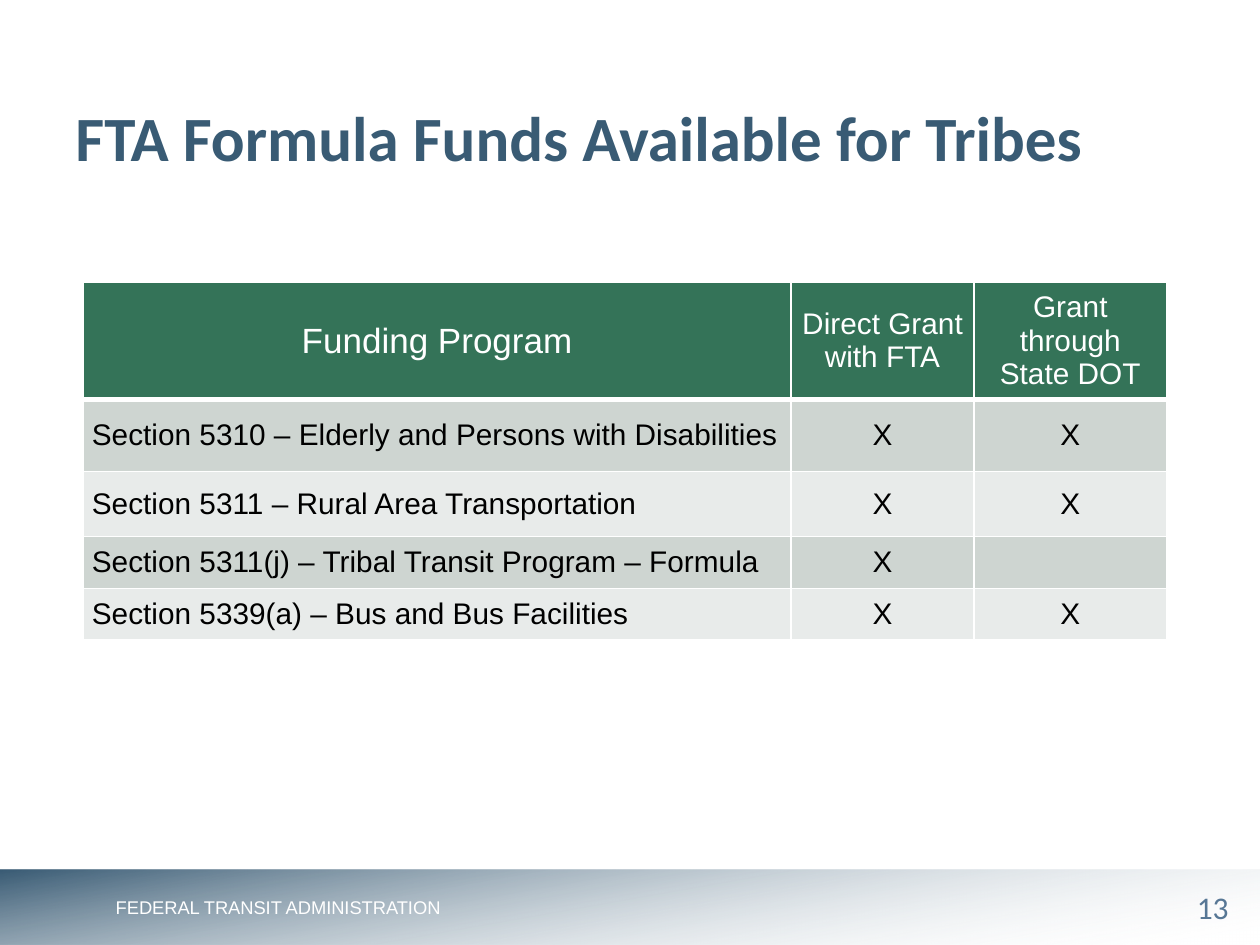
import pptx
import pptx.dml.color
import pptx.enum.shapes
import pptx.enum.text
import pptx.oxml
import pptx.oxml.ns
import pptx.util
from lxml import etree

Inches = pptx.util.Inches
Pt = pptx.util.Pt
qn = pptx.oxml.ns.qn
ALIGN = pptx.enum.text.PP_ALIGN
MIDDLE = pptx.enum.text.MSO_ANCHOR.MIDDLE

SLIDE_WIDTH, SLIDE_HEIGHT = 10, 7.5
BAND_SHARE = 0.08
NAVY, SLATE, GREEN, WHITE, BLACK = "395B74", "577795", "347358", "FFFFFF", "000000"
ROW_FILLS = ["CED5D1", "E8EBEA"]
COLUMN_WIDTHS = [5.62, 1.45, 1.53]
ROW_HEIGHTS = [0.64, 0.57, 0.52, 0.41, 0.41]
HEADERS = ["Funding Program", "Direct Grant with FTA", "Grant through State DOT"]
PROGRAMS = [
    ["Section 5310 – Elderly and Persons with Disabilities", "X", "X"],
    ["Section 5311 – Rural Area Transportation", "X", "X"],
    ["Section 5311(j) – Tribal Transit Program – Formula", "X", ""],
    ["Section 5339(a) – Bus and Bus Facilities", "X", "X"],
]


def color(hex_string):
    return pptx.dml.color.RGBColor.from_string(hex_string)


def set_text(frame, text, size, hex_string, font="Arial", bold=False, align=ALIGN.LEFT):
    paragraph = frame.paragraphs[0]
    paragraph.text = text
    paragraph.alignment = align
    paragraph.font.name = font
    paragraph.font.size = Pt(size)
    paragraph.font.bold = bold
    paragraph.font.color.rgb = color(hex_string)


def set_margins(target):
    target.margin_left = target.margin_right = Inches(0.07)
    target.margin_top = target.margin_bottom = Inches(0.04)


def add_text(slide, box, text, size, hex_string, wrap=True, **style):
    shape = slide.shapes.add_textbox(*[Inches(length) for length in box])
    shape.text_frame.word_wrap = wrap
    set_text(shape.text_frame, text, size, hex_string, **style)
    return shape.text_frame


def add_footer_band(slide):
    height = SLIDE_HEIGHT * BAND_SHARE
    band = slide.shapes.add_shape(
        pptx.enum.shapes.MSO_SHAPE.RECTANGLE,
        0, Inches(SLIDE_HEIGHT - height), Inches(SLIDE_WIDTH), Inches(height))
    band.shadow.inherit = False
    band.line.fill.background()
    band.fill.gradient()
    band.fill.gradient_angle = 280
    for stop, position, hex_string in zip(band.fill.gradient_stops, [0, 0.99], [NAVY, WHITE]):
        stop.position = position
        stop.color.rgb = color(hex_string)
    last_color = list(band._element.spPr.iter(qn("a:srgbClr")))[-1]
    etree.SubElement(last_color, qn("a:alpha"), val="0")


def set_borders(cell, bottom_width):
    properties = cell._tc.get_or_add_tcPr()
    widths = {"lnL": 1, "lnR": 1, "lnT": 1, "lnB": bottom_width}
    for index, (side, width) in enumerate(widths.items()):
        line = etree.Element(qn(f"a:{side}"), w=str(Pt(width)))
        fill = etree.SubElement(line, qn("a:solidFill"))
        etree.SubElement(fill, qn("a:srgbClr"), val=WHITE)
        properties.insert(index, line)


def format_cell(cell, text, row, column):
    header = row == 0
    cell.vertical_anchor = MIDDLE
    set_margins(cell)
    cell.fill.solid()
    cell.fill.fore_color.rgb = color(GREEN if header else ROW_FILLS[(row - 1) % 2])
    set_borders(cell, 3 if header else 1)
    set_text(cell.text_frame, text,
             20 if header and column == 0 else 17,
             WHITE if header else BLACK,
             align=ALIGN.CENTER if header or column > 0 else ALIGN.LEFT)


def add_funding_table(slide):
    rows = [HEADERS] + PROGRAMS
    table = slide.shapes.add_table(
        len(rows), len(HEADERS), Inches(0.66), Inches(2.24),
        Inches(sum(COLUMN_WIDTHS)), Inches(sum(ROW_HEIGHTS))).table
    for column, width in zip(table.columns, COLUMN_WIDTHS):
        column.width = Inches(width)
    for row, height in zip(table.rows, ROW_HEIGHTS):
        row.height = Inches(height)
    for row, texts in enumerate(rows):
        for column, text in enumerate(texts):
            format_cell(table.cell(row, column), text, row, column)


def main():
    presentation = pptx.Presentation()
    presentation.slide_width = Inches(SLIDE_WIDTH)
    presentation.slide_height = Inches(SLIDE_HEIGHT)
    slide = presentation.slides.add_slide(presentation.slide_layouts[6])
    add_footer_band(slide)
    number = add_text(slide, (9.25, 7.01, 0.75, 0.38), "13", 18, SLATE,
                      font="Calibri", align=ALIGN.CENTER)
    set_margins(number)
    add_text(slide, (0.82, 7.06, 2.85, 0.28), "FEDERAL TRANSIT ADMINISTRATION",
             10.5, WHITE, wrap=False)
    title = add_text(slide, (0.5, 0.58, 8.39, 1), "FTA Formula Funds Available for Tribes",
                     36, NAVY, font="Calibri", bold=True)
    title.vertical_anchor = MIDDLE
    add_funding_table(slide)
    presentation.save("out.pptx")


if __name__ == "__main__":
    main()
